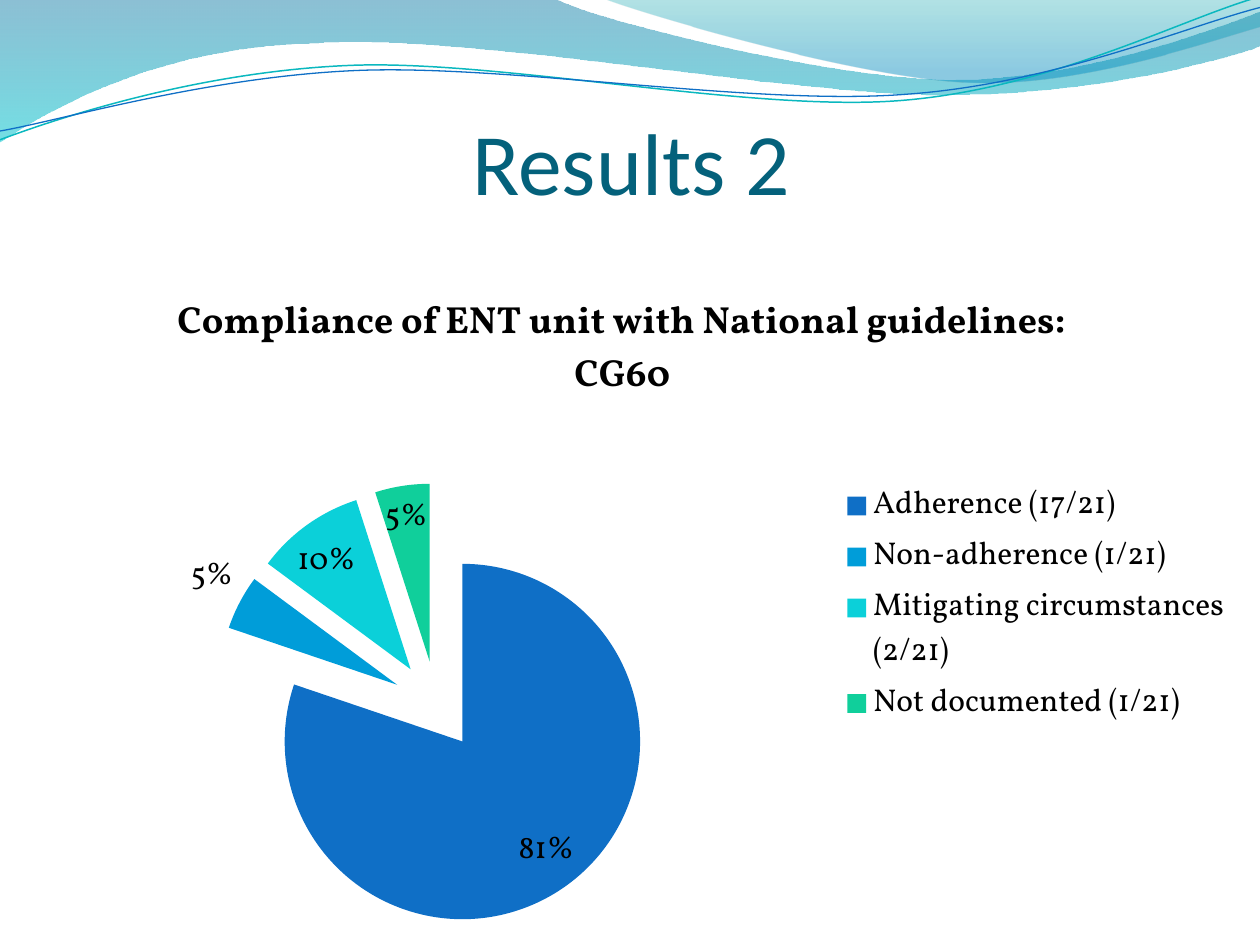
import math

from lxml import etree
from pptx import Presentation
from pptx import util as u
from pptx.chart import data
from pptx.dml import color
from pptx.enum import chart as ch
from pptx.enum import text
from pptx.oxml import ns

W, H = 10, 7.5
COLORS = {
    "title": "04617B", "text": "000000",
    "wave_top": "0074A1", "wave_bottom": "00C6CF",
    "crest_top": "00A1A9", "crest_bottom": "008BBF",
    "teal_line": "0AB8BF", "blue_line": "0F6FC6",
}
SLICES = ["0F6FC6", "009DD9", "0BD0D9", "10CF9B"]
SHARES = {
    "Adherence (17/21)": 81,
    "Non-adherence (1/21)": 5,
    "Mitigating circumstances (2/21)": 10,
    "Not documented (1/21)": 5,
}
CHART_TITLE = "Compliance of ENT unit with National guidelines: CG60"
TILT = 357.3

WAVE = [(0, 0), (4.4, -0.01), (4.76, 0.17, 6.64, 0.63, 7.58, 0.63),
        (8.53, 0.63, 9.58, 0.26, 10, 0.09), (10.01, 0.36),
        (9.83, 0.44, 8.7, 0.76, 7.46, 0.75),
        (6.22, 0.75, 3.82, 0.28, 2.57, 0.34),
        (1.29, 0.36, 0.46, 0.83, -0.01, 1.13), (0, 0)]
CREST = [(4.79, -0.01), (5.09, 0.11, 6.82, 0.62, 7.69, 0.65),
         (8.56, 0.69, 9.61, 0.32, 10, 0.21), (10, 0), (4.79, -0.01)]
TEAL = [(0, 1.11), (0.48, 0.93, 1.58, 0.57, 2.77, 0.52),
        (3.95, 0.47, 5.93, 0.89, 7.13, 0.8),
        (8.33, 0.71, 9.38, 0.15, 9.98, -0.02)]
BLUE = [(0, 1.04), (0.47, 0.96, 1.64, 0.61, 2.83, 0.56),
        (4.03, 0.51, 5.97, 0.84, 7.17, 0.75),
        (8.36, 0.67, 9.41, 0.21, 10, 0.06)]


def rgb(value):
    return color.RGBColor.from_string(value)


def pairs(seg):
    return list(zip(seg[::2], seg[1::2]))


def turn(seg, degrees, cx, cy):
    cos, sin = math.cos(math.radians(degrees)), math.sin(math.radians(degrees))
    turned = []
    for x, y in pairs(seg):
        turned += [cx + (x - cx) * cos - (y - cy) * sin,
                   cy + (x - cx) * sin + (y - cy) * cos]
    return turned


def add_outline(s, segs, close):
    points = [(u.Inches(x), u.Inches(y)) for seg in segs for x, y in pairs(seg)]
    fb = s.shapes.build_freeform(*points[0], scale=1.0)
    fb.add_line_segments(points[1:], close=close)
    sp = fb.convert_to_shape()
    sp.shadow.inherit = False
    lines = iter(list(sp.element.iter(ns.qn("a:lnTo"))))
    for seg in segs[1:]:
        first = next(lines)
        if len(seg) == 6:
            curve = etree.Element(ns.qn("a:cubicBezTo"))
            first.addprevious(curve)
            for line in (first, next(lines), next(lines)):
                curve.append(line[0])
                line.getparent().remove(line)
    return sp


def add_wave(s, segs, stops):
    sp = add_outline(s, segs, True)
    sp.line.fill.background()
    sp.fill.background()
    old = sp.element.spPr.find(ns.qn("a:noFill"))
    grad = etree.Element(ns.qn("a:gradFill"), rotWithShape="1")
    gs_lst = etree.SubElement(grad, ns.qn("a:gsLst"))
    for pos, name, alpha in stops:
        gs = etree.SubElement(gs_lst, ns.qn("a:gs"), pos=str(pos * 1000))
        clr = etree.SubElement(gs, ns.qn("a:srgbClr"), val=COLORS[name])
        etree.SubElement(clr, ns.qn("a:alpha"), val=str(alpha * 1000))
    etree.SubElement(grad, ns.qn("a:lin"), ang=str(90 * 60000), scaled="1")
    old.getparent().replace(old, grad)


def add_curve(s, segs, name, width, cy):
    sp = add_outline(s, [turn(seg, -TILT, W / 2, cy) for seg in segs], False)
    sp.rotation = TILT
    sp.fill.background()
    sp.line.color.rgb = rgb(COLORS[name])
    sp.line.width = u.Pt(width)


def set_font(font, size, face, name):
    font.size = u.Pt(size)
    font.name = face
    font.color.rgb = rgb(COLORS[name])


def add_title(s, words):
    box = s.shapes.add_textbox(u.Inches(0.51), u.Inches(0.44), u.Inches(9), u.Inches(1.25))
    tf = box.text_frame
    tf.word_wrap = True
    tf.vertical_anchor = text.MSO_ANCHOR.BOTTOM
    tf.margin_left = tf.margin_right = tf.margin_bottom = 0
    p = tf.paragraphs[0]
    p.alignment = text.PP_ALIGN.CENTER
    r = p.add_run()
    r.text = words
    set_font(r.font, 50, "Calibri", "title")


def add_pie(s):
    cd = data.CategoryChartData()
    cd.categories = list(SHARES)
    cd.add_series(CHART_TITLE, list(SHARES.values()))
    chart = s.shapes.add_chart(ch.XL_CHART_TYPE.PIE, 0, u.Inches(2.1), u.Inches(9.88),
                               u.Inches(5.4), cd).chart
    set_font(chart.font, 18, "Vollkorn", "text")
    chart.has_title = True
    r = chart.chart_title.text_frame.paragraphs[0].add_run()
    r.text = CHART_TITLE
    set_font(r.font, 21.6, "Vollkorn", "text")
    r.font.bold = True
    chart.has_legend = True
    chart.legend.position = ch.XL_LEGEND_POSITION.RIGHT
    chart.legend.include_in_layout = False
    plot = chart.plots[0]
    plot.vary_by_categories = True
    plot.has_data_labels = True
    labels = plot.data_labels
    labels.show_value = True
    labels.show_percentage = False
    labels.number_format = '0"%"'
    labels.number_format_is_linked = False
    labels.position = ch.XL_LABEL_POSITION.BEST_FIT
    series = plot.series[0]
    for i, value in enumerate(SLICES):
        fill = series.points[i].format.fill
        fill.solid()
        fill.fore_color.rgb = rgb(value)
    explosion = etree.Element(ns.qn("c:explosion"), val="25")
    series._element.find(ns.qn("c:dPt")).addprevious(explosion)


def main():
    prs = Presentation()
    prs.slide_width, prs.slide_height = u.Inches(W), u.Inches(H)
    s = prs.slides.add_slide(prs.slide_layouts[6])
    add_wave(s, WAVE, [(0, "wave_top", 45), (100, "wave_bottom", 55)])
    add_wave(s, CREST, [(0, "crest_top", 30), (80, "crest_bottom", 45)])
    add_curve(s, TEAL, "teal_line", 0.85, 0.58)
    add_curve(s, BLUE, "blue_line", 0.75, 0.59)
    add_title(s, "Results 2")
    add_pie(s)
    prs.save("out.pptx")


if __name__ == "__main__":
    main()
